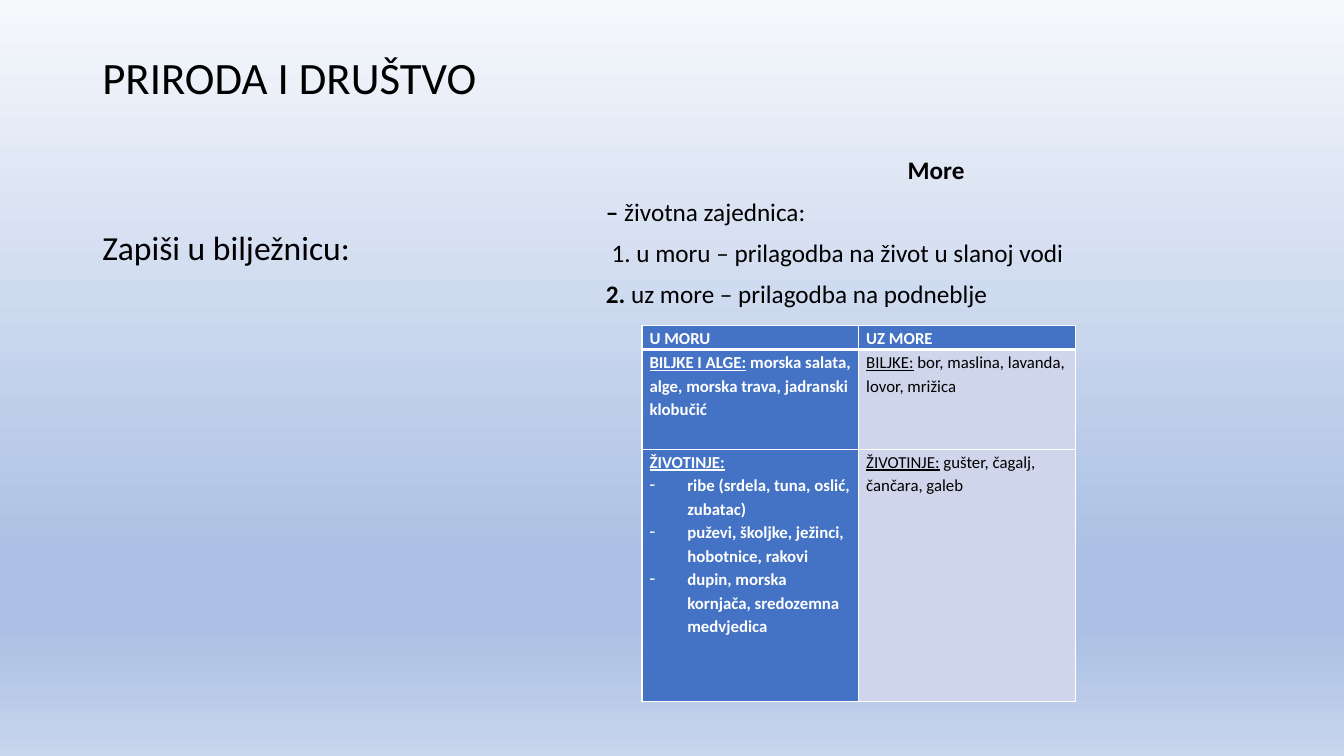
"""Builds a nature and society slide about life in and by the sea."""
from lxml import etree
from pptx import Presentation
from pptx.dml.color import RGBColor
from pptx.enum.text import MSO_ANCHOR, PP_ALIGN
from pptx.oxml.ns import qn
from pptx.util import Cm, Pt

BOTTOM, TOP = MSO_ANCHOR.BOTTOM, MSO_ANCHOR.TOP
LEFT, CENTER = PP_ALIGN.LEFT, PP_ALIGN.CENTER
FONT = "Calibri"
COLORS = {"ink": "000000", "white": "FFFFFF", "blue": "4472C4", "pale": "CFD5EA",
          "sky": "F6F8FC", "sea": "ABC0E4", "foam": "C7D5ED"}
STOPS = [(0, "sky"), (74, "sea"), (83, "sea"), (100, "foam")]

# Each box: left, top, width, height, anchor, size, lines of (align, runs of (text, bold)).
BOXES = [
    (2.33, -1.7, 10.92, 4.44, BOTTOM, 32, [(LEFT, [("PRIRODA I DRUŠTVO", False)])]),
    (15.02, 3.86, 17.14, 11.88, TOP, 18, [
        (CENTER, [("More", True)]),
        (LEFT, [("– ", True), ("životna zajednica:", False)]),
        (LEFT, [(" 1. u moru – prilagodba na život u slanoj vodi", False)]),
        (LEFT, [("2. ", True), ("uz more – prilagodba na podneblje", False)])]),
    (2.33, 5.72, 10.92, 10.59, TOP, 24, [(LEFT, [("Zapiši u bilježnicu:", False)])]),
]

# Each cell: heading, text after it, bullets.
TABLE = [
    [("U MORU", "", []), ("UZ MORE", "", [])],
    [("BILJKE I ALGE:", " morska salata, alge, morska trava, jadranski klobučić", []),
     ("BILJKE:", " bor, maslina, lavanda, lovor, mrižica", [])],
    [("ŽIVOTINJE:", "", ["ribe (srdela, tuna, oslić, zubatac)",
                         "puževi, školjke, ježinci, hobotnice, rakovi",
                         "dupin, morska kornjača, sredozemna medvjedica"]),
     ("ŽIVOTINJE:", " gušter, čagalj, čančara, galeb", [])],
]
PLACE = (16.18, 8.2)
WIDTH, ROWS = 5.46, (0.61, 2.51, 6.35)


def style(par, size, color, bold=None):
    par.font.name, par.font.size, par.font.bold = FONT, Pt(size), bold
    par.font.color.rgb = RGBColor.from_string(COLORS[color])


def add_run(par, text):
    run = par.add_run()
    run.text = text
    return run


def paint(slide):
    fill = slide.background.fill
    fill.gradient()
    fill.gradient_angle = 270
    stops = slide.element.find(".//" + qn("a:gsLst"))
    for old in list(stops):
        stops.remove(old)
    for pos, color in STOPS:
        stop = etree.SubElement(stops, qn("a:gs"), pos=str(pos * 1000))
        etree.SubElement(stop, qn("a:srgbClr"), val=COLORS[color])


def add_box(slide, left, top, width, height, anchor, size, lines):
    box = slide.shapes.add_textbox(Cm(left), Cm(top), Cm(width), Cm(height))
    frame = box.text_frame
    frame.word_wrap, frame.vertical_anchor = True, anchor
    for i, (align, runs) in enumerate(lines):
        par = frame.add_paragraph() if i else frame.paragraphs[0]
        par.alignment, par.line_spacing = align, 0.9
        if i:
            par.space_before = Pt(10)
        same = len(runs) == 1
        style(par, size, "ink", runs[0][1] if same else None)
        for text, bold in runs:
            run = add_run(par, text)
            if not same:
                run.font.bold = bold


def add_edges(cell, row):
    props = cell._tc.get_or_add_tcPr()
    for i, side in enumerate("LRTB"):
        thick = (row, side) in ((0, "B"), (1, "T"))
        line = etree.Element(qn("a:ln" + side), w=str(Pt(3 if thick else 1)))
        fill = etree.SubElement(line, qn("a:solidFill"))
        etree.SubElement(fill, qn("a:srgbClr"), val=COLORS["white"])
        props.insert(i, line)


def fill_cell(cell, row, col, head, rest, items):
    dark = row == 0 or col == 0
    cell.fill.solid()
    cell.fill.fore_color.rgb = RGBColor.from_string(COLORS["blue" if dark else "pale"])
    cell.margin_left = cell.margin_right = Cm(0.19)
    cell.margin_top = cell.margin_bottom = 0
    add_edges(cell, row)
    frame = cell.text_frame
    for i, text in enumerate([head] + items):
        par = frame.add_paragraph() if i else frame.paragraphs[0]
        par.line_spacing = 1.15
        if i:
            props = par._p.get_or_add_pPr()
            props.set("marL", str(Cm(0.95)))
            props.set("indent", str(-Cm(0.95)))
            etree.SubElement(props, qn("a:buChar"), char="-")
        style(par, 12, "white" if dark else "ink", dark)
        run = add_run(par, text)
        if row and not i:
            run.font.underline = True
            if rest:
                add_run(par, rest)


def add_grid(slide):
    left, top = PLACE
    count = len(TABLE[0])
    grid = slide.shapes.add_table(len(TABLE), count, Cm(left), Cm(top),
                                  Cm(WIDTH * count), Cm(sum(ROWS))).table
    for col in grid.columns:
        col.width = Cm(WIDTH)
    for r, cells in enumerate(TABLE):
        grid.rows[r].height = Cm(ROWS[r])
        for c, parts in enumerate(cells):
            fill_cell(grid.cell(r, c), r, c, *parts)


def main():
    deck = Presentation()
    deck.slide_width, deck.slide_height = Cm(33.87), Cm(19.05)
    slide = deck.slides.add_slide(deck.slide_layouts[6])
    paint(slide)
    for box in BOXES:
        add_box(slide, *box)
    add_grid(slide)
    deck.save("out.pptx")


if __name__ == "__main__":
    main()
